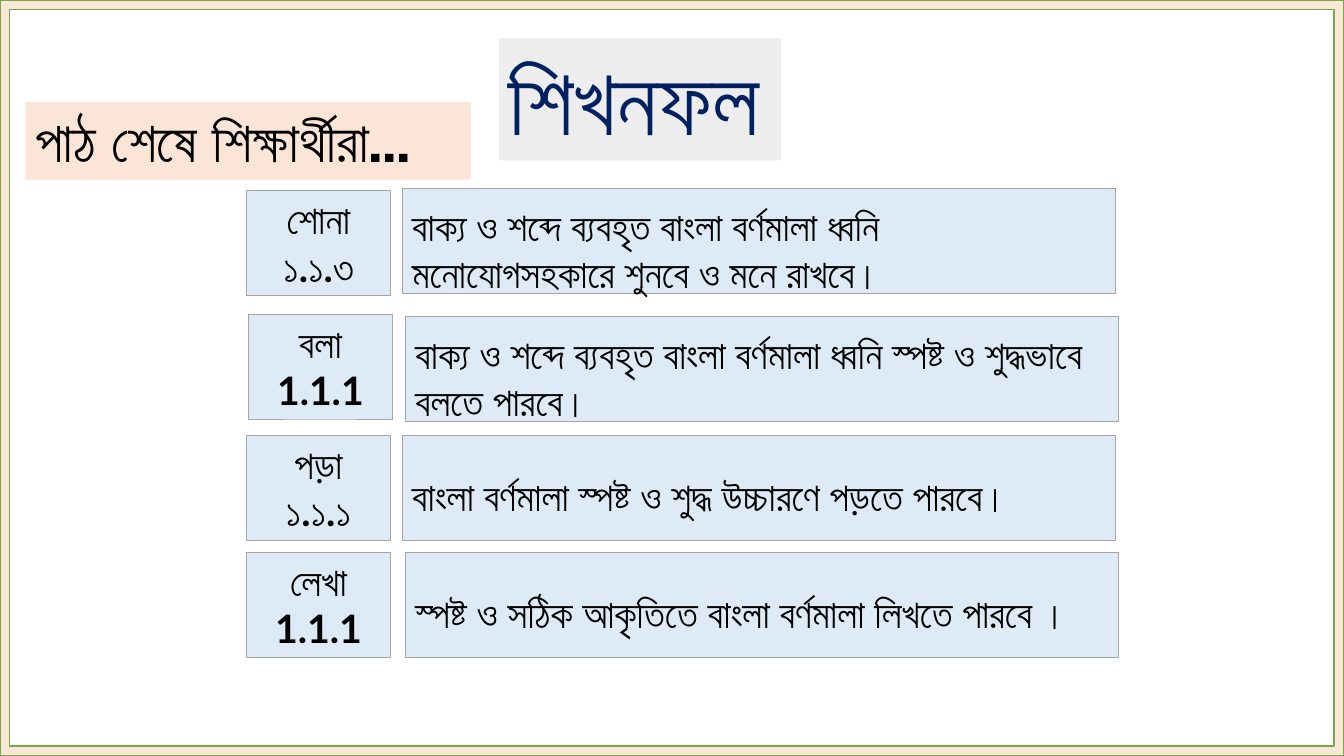
from pptx import Presentation
from pptx.dml.color import RGBColor
from pptx.enum.shapes import MSO_SHAPE
from pptx.enum.text import MSO_ANCHOR, MSO_AUTO_SIZE, PP_ALIGN
from pptx.util import Cm, Pt

RECT, FRAME = MSO_SHAPE.RECTANGLE, MSO_SHAPE.FRAME
TOP, MIDDLE = MSO_ANCHOR.TOP, MSO_ANCHOR.MIDDLE
LEFT, CENTER = PP_ALIGN.LEFT, PP_ALIGN.CENTER
FIXED = MSO_AUTO_SIZE.NONE

FONT = "Lato"
WIDE, HIGH = 33.87, 19.05
PEACH, BLUE, GREY = "FBE5D6", "DEEBF7", "A5A5A5"
LABEL, GOAL, TALL = 3.61, 17.98, 2.64

# Row origin, offset of the goal box, label lines, goal lines
ROWS = [
    (6.22, 4.8, 3.91, -0.05, ["শোনা ১.১.৩"],
     ["বাক্য ও শব্দে ব্যবহৃত বাংলা বর্ণমালা ধ্বনি",
      "মনোযোগসহকারে শুনবে ও মনে রাখবে।"]),
    (6.27, 7.92, 3.94, 0.06, ["বলা", "1.1.1"],
     ["বাক্য ও শব্দে ব্যবহৃত বাংলা বর্ণমালা ধ্বনি স্পষ্ট ও শুদ্ধভাবে বলতে পারবে।"]),
    (6.22, 10.97, 3.91, 0, ["পড়া", "১.১.১"],
     ["বাংলা বর্ণমালা স্পষ্ট ও শুদ্ধ উচ্চারণে পড়তে পারবে।"]),
    (6.22, 13.92, 3.99, 0, ["লেখা", "1.1.1"],
     ["স্পষ্ট ও সঠিক আকৃতিতে বাংলা বর্ণমালা লিখতে পারবে ।"]),
]


def color(code):
    return RGBColor.from_string(code)


def paint(shape, fill, line=None, width=0.5):
    shape.fill.solid()
    shape.fill.fore_color.rgb = color(fill)
    if line:
        shape.line.color.rgb = color(line)
        shape.line.width = Pt(width)
    else:
        shape.line.fill.background()


def write(shape, lines, size, ink="000000", bold=False, align=LEFT, anchor=TOP):
    frame = shape.text_frame
    frame.word_wrap = True
    frame.auto_size = FIXED
    frame.vertical_anchor = anchor
    frame.text = "\n".join(lines)
    for para in frame.paragraphs:
        para.alignment = align
        para.font.name = FONT
        para.font.size = Pt(size)
        para.font.bold = bold
        para.font.color.rgb = color(ink)


def add_box(shapes, x, y, w, h, kind=RECT):
    box = shapes.add_shape(kind, Cm(x), Cm(y), Cm(w), Cm(h))
    box.shadow.inherit = False
    return box


def add_border(slide, w, h):
    border = add_box(slide.shapes, 0, 0, w, h, FRAME)
    border.adjustments[0] = 0.013
    paint(border, PEACH, "70AD47", 1)


def add_title(slide, x, y, w, h):
    title = slide.shapes.title
    title.left, title.top, title.width, title.height = Cm(x), Cm(y), Cm(w), Cm(h)
    paint(title, "EDEDED")
    write(title, ["শিখনফল"], 66, "002060")


def add_intro(slide, x, y, w, h):
    intro = add_box(slide.shapes, x, y, w, h)
    paint(intro, PEACH)
    write(intro, ["পাঠ শেষে শিক্ষার্থীরা…"], 40, bold=True)


def add_row(slide, x, y, dx, dy, code, aim):
    group = slide.shapes.add_group_shape()
    label = add_box(group.shapes, x, y, LABEL, TALL)
    goal = add_box(group.shapes, x + dx, y + dy, GOAL, TALL)
    for box in (label, goal):
        paint(box, BLUE, GREY)
    write(label, code, 28, bold=True, align=CENTER, anchor=MIDDLE)
    write(goal, aim, 28, anchor=MIDDLE)
    # Goal text sits a little below the middle
    goal.text_frame.margin_top = Cm(0.42)
    goal.text_frame.margin_bottom = 0


def main():
    deck = Presentation()
    deck.slide_width, deck.slide_height = Cm(WIDE), Cm(HIGH)
    slide = deck.slides.add_slide(deck.slide_layouts[5])

    # Border and headings
    add_border(slide, WIDE, HIGH)
    add_title(slide, 12.57, 0.97, 7.11, 3.07)
    add_intro(slide, 0.64, 2.57, 11.23, 1.96)

    # Learning goals
    for row in ROWS:
        add_row(slide, *row)

    deck.save("out.pptx")


if __name__ == "__main__":
    main()
